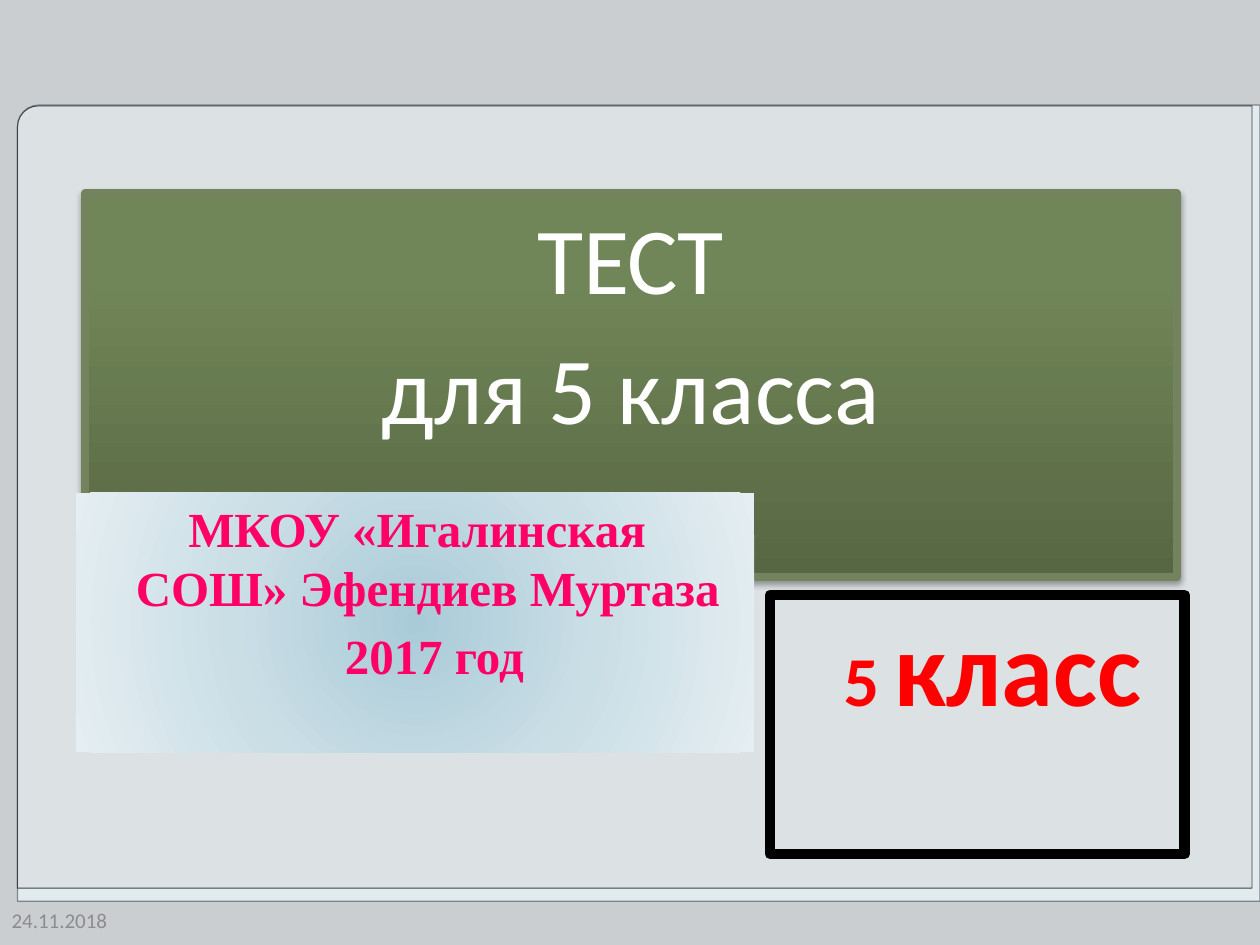
from lxml.etree import SubElement
from pptx import Presentation
from pptx.dml.color import RGBColor
from pptx.enum.shapes import MSO_SHAPE
from pptx.enum.text import MSO_ANCHOR, PP_ALIGN
from pptx.oxml import parse_xml
from pptx.oxml.ns import nsdecls, qn
from pptx.util import Pt

THEME = dict(
    back="CBCED1", sheet="E2ECEF", glass="D8D8D8", rim="7E848D", edge="3F4247",
    green="72835D", black="000000", white="FFFFFF", pink="FF0066", red="FF0000",
    grey="8C8C8C", sans="Calibri", serif="Times New Roman",
    title=54, big=60, mid=40, body=28, small=12,
)
GREEN = [(0, "576743"), (80, "718658"), (100, "718857")]
BLUE = [(0, "A9CBD8"), (50, "CADEE6"), (100, "E5EEF2")]
UP = '<a:lin ang="16200000" scaled="0"/>'
ROUND = ('<a:path path="circle"><a:fillToRect l="50000" t="50000" '
         'r="50000" b="50000"/></a:path>')

# left, top, width, height in points
PANELS = [
    dict(box=(10, 60, 710, 455), fill="sheet", line="rim", weight=0.75),
    dict(box=(10, 60.5, 705.5, 447), fill="glass", line="edge", weight=0.5, alpha=50),
]
TITLE = (48.5, 110.5, 624, 219.5)
SCHOOL = (43.5, 281.5, 387.5, 148.5)
GRADE = (440, 340, 237, 148)
DATE = (-0.5, 511, 84, 29)

# each paragraph: its runs as (text, size), left margin, first-line indent
HEADING = [([("ТЕСТ", "title")], 0, 0), ([("для 5 класса", "title")], 0, 0)]
AUTHOR = [
    ([("МКОУ «Игалинская СОШ» Эфендиев Муртаза", "body")], 27, 30),
    ([("2017 год", "body")], 146.5, 0),
]
CLASS = [([("5 ", "mid"), ("класс", "big")], 35, 0)]
STAMP = [([("24.11.2018", "small")], 0, 0)]


def tint(key):
    return RGBColor.from_string(THEME[key])


def add_box(slide, box, kind=MSO_SHAPE.RECTANGLE, fill=None, line=None, weight=1):
    shape = slide.shapes.add_shape(kind, *map(Pt, box))
    shape.shadow.inherit = False
    if fill:
        shape.fill.solid()
        shape.fill.fore_color.rgb = tint(fill)
    else:
        shape.fill.background()
    if line:
        shape.line.color.rgb = tint(line)
        shape.line.width = Pt(weight)
        SubElement(shape.line._ln, qn("a:round"))
    else:
        shape.line.fill.background()
    return shape


def add_panel(slide, box, alpha=None, **style):
    """Sheet with one rounded corner, turned to the top left."""
    shape = add_box(slide, box, MSO_SHAPE.ROUND_1_RECTANGLE, **style)
    shape.adjustments[0] = 0.027
    shape._element.spPr.xfrm.set("flipH", "1")
    if alpha:
        tone = shape._element.spPr.find(".//" + qn("a:srgbClr"))
        SubElement(tone, qn("a:alpha"), val=str(alpha * 1000))


def blend(shape, stops, course):
    """Replace the empty fill by a gradient."""
    marks = "".join(f'<a:gs pos="{pos * 1000}"><a:srgbClr val="{tone}"/></a:gs>'
                    for pos, tone in stops)
    old = shape._element.spPr.find(qn("a:noFill"))
    old.getparent().replace(old, parse_xml(
        f'<a:gradFill {nsdecls("a")} rotWithShape="1">'
        f'<a:gsLst>{marks}</a:gsLst>{course}</a:gradFill>'))


def cast(shape):
    """Give the shape a soft shadow below."""
    shape._element.spPr.find(qn("a:effectLst")).append(parse_xml(
        f'<a:outerShdw {nsdecls("a")} blurRad="{Pt(3.1)}" dist="{Pt(1.8)}" '
        'dir="5400000" rotWithShape="0"><a:srgbClr val="000000">'
        '<a:alpha val="35000"/></a:srgbClr></a:outerShdw>'))


def write(shape, paras, color, font="sans", bold=False, align=PP_ALIGN.LEFT,
          anchor=MSO_ANCHOR.TOP, space=0):
    frame = shape.text_frame
    frame.word_wrap = True
    frame.vertical_anchor = anchor
    for i, (runs, left, first) in enumerate(paras):
        para = frame.add_paragraph() if i else frame.paragraphs[0]
        para.alignment = align
        para.space_before = Pt(space)
        props = para._p.get_or_add_pPr()
        props.set("marL", str(Pt(left)))
        props.set("indent", str(Pt(first)))
        for text, size in runs:
            run = para.add_run()
            run.text = text
            run.font.name = THEME[font]
            run.font.size = Pt(THEME[size])
            run.font.bold = bold
            run.font.color.rgb = tint(color)


def main():
    deck = Presentation()
    deck.slide_width, deck.slide_height = Pt(720), Pt(540)
    slide = deck.slides.add_slide(deck.slide_layouts[6])
    slide.background.fill.solid()
    slide.background.fill.fore_color.rgb = tint("back")

    for panel in PANELS:
        add_panel(slide, **panel)
    date = slide.shapes.add_textbox(*map(Pt, DATE))
    write(date, STAMP, "grey", anchor=MSO_ANCHOR.MIDDLE)

    title = add_box(slide, TITLE, line="green", weight=4.5)
    blend(title, GREEN, UP)
    cast(title)
    write(title, HEADING, "white", align=PP_ALIGN.CENTER, space=10)

    school = add_box(slide, SCHOOL)
    blend(school, BLUE, ROUND)
    write(school, AUTHOR, "pink", font="serif", bold=True, space=5)

    grade = add_box(slide, GRADE, line="black", weight=6)
    write(grade, CLASS, "red", bold=True, space=10)
    deck.save("out.pptx")


if __name__ == "__main__":
    main()
